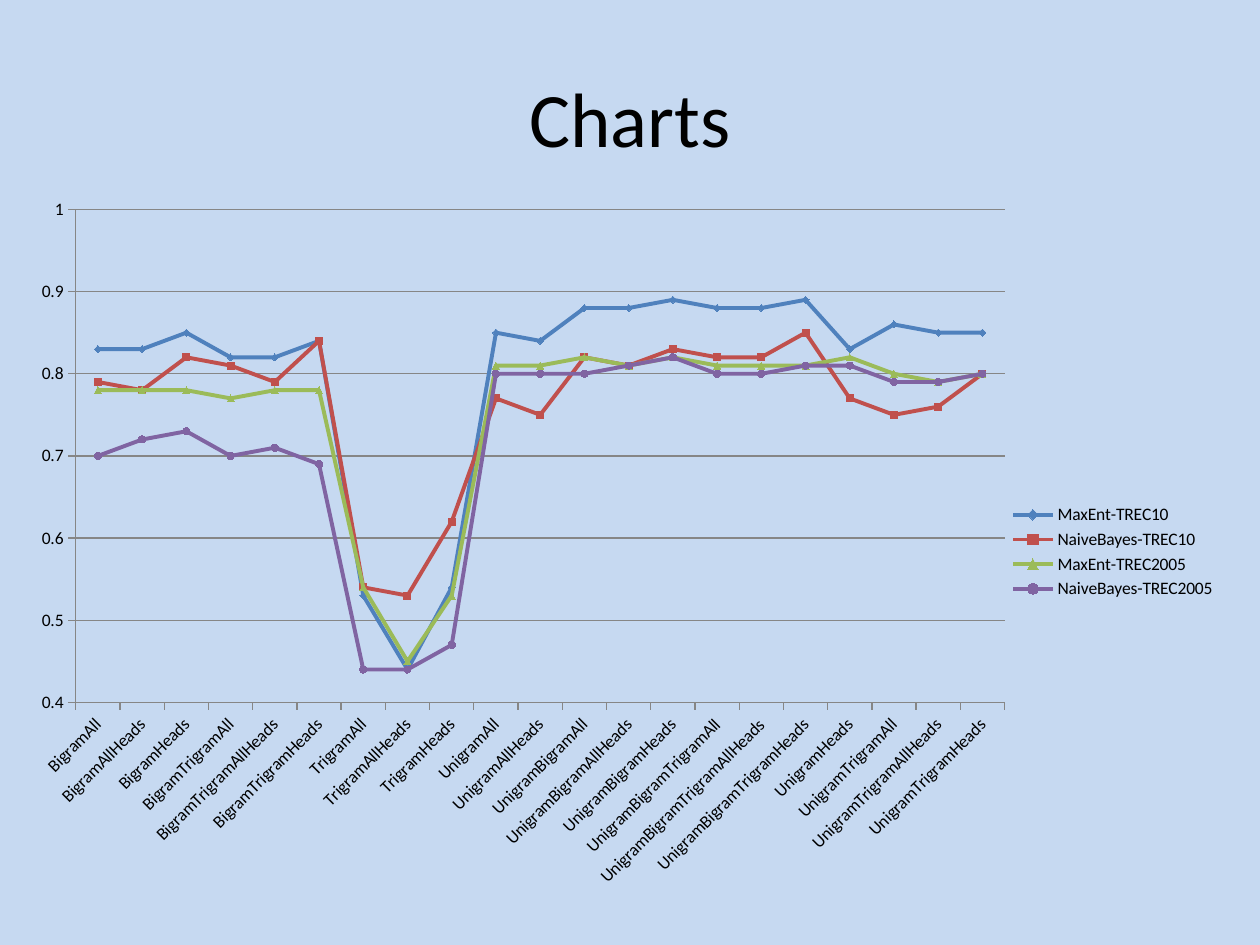
"""Build a slide with a line chart of classifier accuracy by feature set."""
from dataclasses import dataclass

import lxml.etree
import pptx
import pptx.chart.data
import pptx.dml.color
import pptx.enum.chart
import pptx.enum.text
import pptx.oxml
import pptx.oxml.ns
import pptx.util

Inches = pptx.util.Inches
Pt = pptx.util.Pt
MarkerStyle = pptx.enum.chart.XL_MARKER_STYLE


@dataclass(frozen=True)
class Theme:
    """Colours, font and sizes used on the slide."""

    background: str = "C6D9F1"
    text: str = "000000"
    axis: str = "868686"
    font: str = "Calibri"
    title_size: int = 44
    chart_size: int = 10
    series_width: float = 2.25
    axis_width: float = 0.75
    marker_size: int = 4


@dataclass(frozen=True)
class Series:
    """One classifier and data set with its accuracies."""

    name: str
    color: str
    marker: MarkerStyle
    values: tuple[float, ...]


THEME = Theme()
PLOT_AREA = {"x": 0.037, "y": 0.041, "w": 0.776, "h": 0.661}
CATEGORIES = (
    "BigramAll", "BigramAllHeads", "BigramHeads",
    "BigramTrigramAll", "BigramTrigramAllHeads", "BigramTrigramHeads",
    "TrigramAll", "TrigramAllHeads", "TrigramHeads",
    "UnigramAll", "UnigramAllHeads",
    "UnigramBigramAll", "UnigramBigramAllHeads", "UnigramBigramHeads",
    "UnigramBigramTrigramAll", "UnigramBigramTrigramAllHeads",
    "UnigramBigramTrigramHeads", "UnigramHeads",
    "UnigramTrigramAll", "UnigramTrigramAllHeads", "UnigramTrigramHeads",
)
SERIES = (
    Series("MaxEnt-TREC10", "4F81BD", MarkerStyle.DIAMOND,
           (0.83, 0.83, 0.85, 0.82, 0.82, 0.84, 0.53, 0.44, 0.54, 0.85, 0.84,
            0.88, 0.88, 0.89, 0.88, 0.88, 0.89, 0.83, 0.86, 0.85, 0.85)),
    Series("NaiveBayes-TREC10", "C0504D", MarkerStyle.SQUARE,
           (0.79, 0.78, 0.82, 0.81, 0.79, 0.84, 0.54, 0.53, 0.62, 0.77, 0.75,
            0.82, 0.81, 0.83, 0.82, 0.82, 0.85, 0.77, 0.75, 0.76, 0.8)),
    Series("MaxEnt-TREC2005", "9BBB59", MarkerStyle.TRIANGLE,
           (0.78, 0.78, 0.78, 0.77, 0.78, 0.78, 0.54, 0.45, 0.53, 0.81, 0.81,
            0.82, 0.81, 0.82, 0.81, 0.81, 0.81, 0.82, 0.8, 0.79, 0.8)),
    Series("NaiveBayes-TREC2005", "8064A2", MarkerStyle.CIRCLE,
           (0.7, 0.72, 0.73, 0.7, 0.71, 0.69, 0.44, 0.44, 0.47, 0.8, 0.8,
            0.8, 0.81, 0.82, 0.8, 0.8, 0.81, 0.81, 0.79, 0.79, 0.8)),
)


def set_values(target: object, values: dict[str, object]) -> None:
    """Set each named attribute of the target."""
    for name, value in values.items():
        setattr(target, name, value)


def set_fill(fill: object, color: str) -> None:
    """Fill with one solid colour."""
    fill.solid()
    fill.fore_color.rgb = pptx.dml.color.RGBColor.from_string(color)


def set_line(line: object, color: str, width: float) -> None:
    """Give a line its colour and its width in points."""
    set_fill(line.fill, color)
    line.width = Pt(width)


def set_font(font: object, size: int) -> None:
    """Apply the theme font at a size in points."""
    set_values(font, {"name": THEME.font, "size": Pt(size), "bold": False})
    set_fill(font.fill, THEME.text)


def add_title(slide: object, text: str) -> None:
    """Place and format the title placeholder."""
    title = slide.shapes.title
    set_values(title, {"left": Inches(0.5), "top": Inches(0.3),
                       "width": Inches(9), "height": Inches(1.25)})
    title.text_frame.text = text
    title.text_frame.vertical_anchor = pptx.enum.text.MSO_ANCHOR.MIDDLE
    paragraph = title.text_frame.paragraphs[0]
    paragraph.alignment = pptx.enum.text.PP_ALIGN.CENTER
    set_font(paragraph.runs[0].font, THEME.title_size)


def set_plot_area(chart: object) -> None:
    """Fix the inner plot area as fractions of the chart."""
    plot_area = chart._chartSpace.chart.plotArea
    for old_layout in plot_area.findall(pptx.oxml.ns.qn("c:layout")):
        plot_area.remove(old_layout)
    layout = pptx.oxml.parse_xml(
        f'<c:layout {pptx.oxml.ns.nsdecls("c")}><c:manualLayout/></c:layout>')
    settings = {"layoutTarget": "inner", "xMode": "edge", "yMode": "edge", **PLOT_AREA}
    for name, value in settings.items():
        lxml.etree.SubElement(layout[0], pptx.oxml.ns.qn(f"c:{name}"), val=str(value))
    plot_area.insert(0, layout)


def format_axes(chart: object) -> None:
    """Format both axes, the gridlines and the slanted category labels."""
    value_axis, category_axis = chart.value_axis, chart.category_axis
    set_values(value_axis, {"minimum_scale": 0.4, "maximum_scale": 1,
                            "major_unit": 0.1, "has_major_gridlines": True})
    set_values(value_axis.tick_labels,
               {"number_format": "General", "number_format_is_linked": False})
    for axis in (value_axis, category_axis):
        axis.major_tick_mark = pptx.enum.chart.XL_TICK_MARK.OUTSIDE
        set_font(axis.tick_labels.font, THEME.chart_size)
        set_line(axis.format.line, THEME.axis, THEME.axis_width)
    set_line(value_axis.major_gridlines.format.line, THEME.axis, THEME.axis_width)
    category_axis._element.txPr.bodyPr.set("rot", "-2700000")


def format_series(line_series: object, series: Series) -> None:
    """Give one line its colour and marker."""
    line_series.smooth = False
    set_line(line_series.format.line, series.color, THEME.series_width)
    marker = line_series.marker
    set_values(marker, {"style": series.marker, "size": THEME.marker_size})
    set_fill(marker.format.fill, series.color)
    set_line(marker.format.line, series.color, THEME.axis_width)


def add_accuracy_chart(slide: object) -> None:
    """Add the line chart with its legend."""
    data = pptx.chart.data.CategoryChartData()
    data.categories = CATEGORIES
    for series in SERIES:
        data.add_series(series.name, series.values)
    chart = slide.shapes.add_chart(
        pptx.enum.chart.XL_CHART_TYPE.LINE_MARKERS,
        Inches(0.25), Inches(1.42), Inches(9.5), Inches(5.92), data).chart
    set_values(chart, {"has_title": False, "has_legend": True})
    set_font(chart.font, THEME.chart_size)
    set_values(chart.legend, {
        "position": pptx.enum.chart.XL_LEGEND_POSITION.RIGHT,
        "include_in_layout": False})
    set_font(chart.legend.font, THEME.chart_size)
    chart.plots[0].vary_by_categories = False
    set_plot_area(chart)
    format_axes(chart)
    for line_series, series in zip(chart.plots[0].series, SERIES):
        format_series(line_series, series)


def main() -> None:
    """Build and save the presentation."""
    presentation = pptx.Presentation()
    set_values(presentation, {"slide_width": Inches(10), "slide_height": Inches(7.5)})
    slide = presentation.slides.add_slide(
        presentation.slide_layouts.get_by_name("Title Only"))
    set_fill(slide.background.fill, THEME.background)
    add_title(slide, "Charts")
    add_accuracy_chart(slide)
    presentation.save("out.pptx")


if __name__ == "__main__":
    main()
